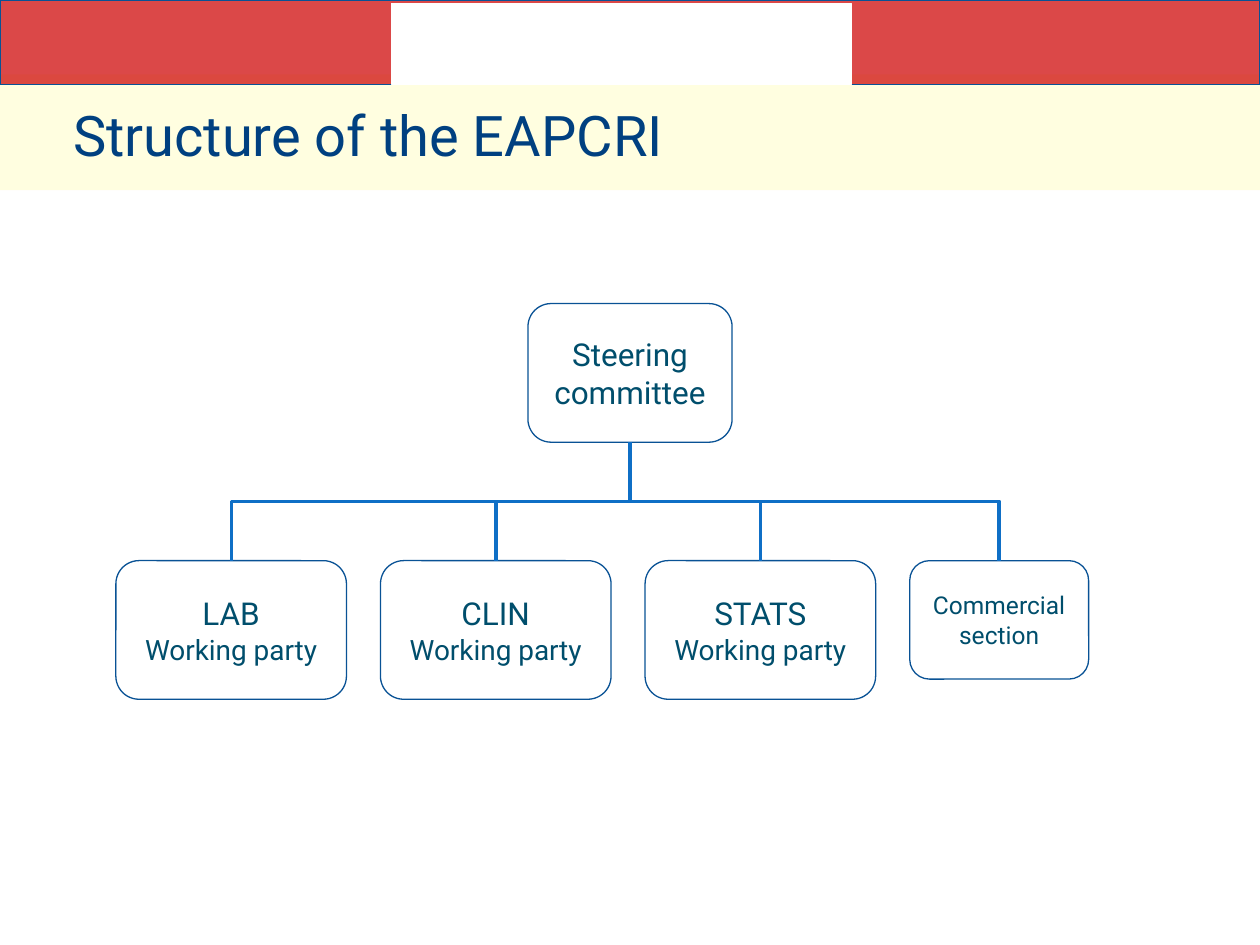
from dataclasses import dataclass

from lxml import etree
from pptx import Presentation
from pptx.dml.color import RGBColor
from pptx.enum import shapes, text
from pptx.oxml.ns import qn
from pptx.util import Pt


@dataclass(frozen=True)
class Theme:
    font: str = "Roboto"
    cream: str = "FFFEE0"
    red: str = "CE0202"
    white: str = "FFFFFF"
    edge: str = "095295"
    link: str = "0F6FC6"
    head: str = "004080"
    ink: str = "004E6C"
    title: int = 32
    large: int = 18
    mid: int = 16
    small: int = 14


T = Theme()
KIND = shapes.MSO_SHAPE
ALIGN = text.PP_ALIGN
TOP = 320.4
PARTIES = ["LAB", "CLIN", "STATS"]


def write(frame, lines, color=T.ink, align=ALIGN.CENTER,
          anchor=text.MSO_ANCHOR.MIDDLE):
    """Fill a text frame with (words, size) lines, one paragraph each."""
    frame.word_wrap = True
    frame.vertical_anchor = anchor
    for i, (words, size) in enumerate(lines):
        para = frame.add_paragraph() if i else frame.paragraphs[0]
        para.alignment = align
        run = para.add_run()
        run.text = words
        run.font.name = T.font
        run.font.size = Pt(size)
        run.font.color.rgb = RGBColor.from_string(color)


def add_box(slide, kind, area, fill, line=None, alpha=None):
    box = slide.shapes.add_shape(kind, *map(Pt, area))
    box.shadow.inherit = False
    box.fill.solid()
    box.fill.fore_color.rgb = RGBColor.from_string(fill)
    if alpha:
        color = box.element.spPr.find(qn("a:solidFill"))[0]
        etree.SubElement(color, qn("a:alpha")).set("val", str(alpha * 1000))
    if line:
        box.line.color.rgb = RGBColor.from_string(line)
        box.line.width = Pt(0.75)
    else:
        box.line.fill.background()
    return box


def add_node(slide, area, lines):
    node = add_box(slide, KIND.ROUNDED_RECTANGLE, area, T.white, T.edge)
    write(node.text_frame, lines)
    return node


def add_link(slide, child, root):
    """Join child top to root bottom by an elbow that leaves vertically."""
    link = slide.shapes.add_connector(shapes.MSO_CONNECTOR.ELBOW, 0, 0, 0, 0)
    link.begin_connect(child, 0)
    link.end_connect(root, 2)
    x1, x2 = (s.left + s.width // 2 for s in (child, root))
    y1, y2 = child.top, root.top + root.height
    # A quarter turn swaps width and height around the centre.
    link.width, link.height = y1 - y2, abs(x2 - x1)
    link.left = (x1 + x2 - link.width) // 2
    link.top = (y1 + y2 - link.height) // 2
    left = x1 < x2
    frame = link.element.spPr.find(qn("a:xfrm"))
    frame.set("rot", str((90 if left else 270) * 60000))
    frame.set("flipH", "1" if left else "0")
    frame.set("flipV", "1")
    link.line.color.rgb = RGBColor.from_string(T.link)
    link.line.width = Pt(2)
    etree.SubElement(link.element.spPr, qn("a:effectLst"))


def add_title(slide, words):
    title = slide.shapes.title
    title.left, title.top, title.width, title.height = map(
        Pt, (41.76, 54, 635.76, 42.48))
    frame = title.text_frame
    frame.margin_left = frame.margin_right = frame.margin_bottom = 0
    frame.margin_top = Pt(3.6)
    write(frame, [(words, T.title)], T.head, ALIGN.LEFT, text.MSO_ANCHOR.TOP)
    slide.shapes.element.append(title.element)  # in front of the bands


def add_bands(slide):
    add_box(slide, KIND.RECTANGLE, (0, 42.48, 720, 66.24), T.cream)
    add_box(slide, KIND.RECTANGLE, (0, 0, 720, 48.24), T.red, T.edge, 72)
    add_box(slide, KIND.RECTANGLE, (223.92, 2.16, 262.8, 46.08),
            T.white, T.white)


def add_chart(slide):
    root = add_node(slide, (301.68, 173.52, 116.64, 79.2),
                    [("Steering committee", T.large)])
    left, step = 66.24, 151.2
    nodes = [
        add_node(slide, (left + i * step, TOP, 131.76, 79.2),
                 [(name, T.large), ("Working party", T.mid)])
        for i, name in enumerate(PARTIES)
    ]
    nodes.append(add_node(
        slide, (left + len(PARTIES) * step, TOP, 102.24, 67.68),
        [("Commercial", T.small), ("section", T.small)]))
    for node in nodes:
        add_link(slide, node, root)


def main():
    deck = Presentation()
    deck.slide_width, deck.slide_height = Pt(720), Pt(540)
    slide = deck.slides.add_slide(deck.slide_layouts[5])
    add_bands(slide)
    add_title(slide, "Structure of the EAPCRI")
    add_chart(slide)
    deck.save("out.pptx")


if __name__ == "__main__":
    main()
